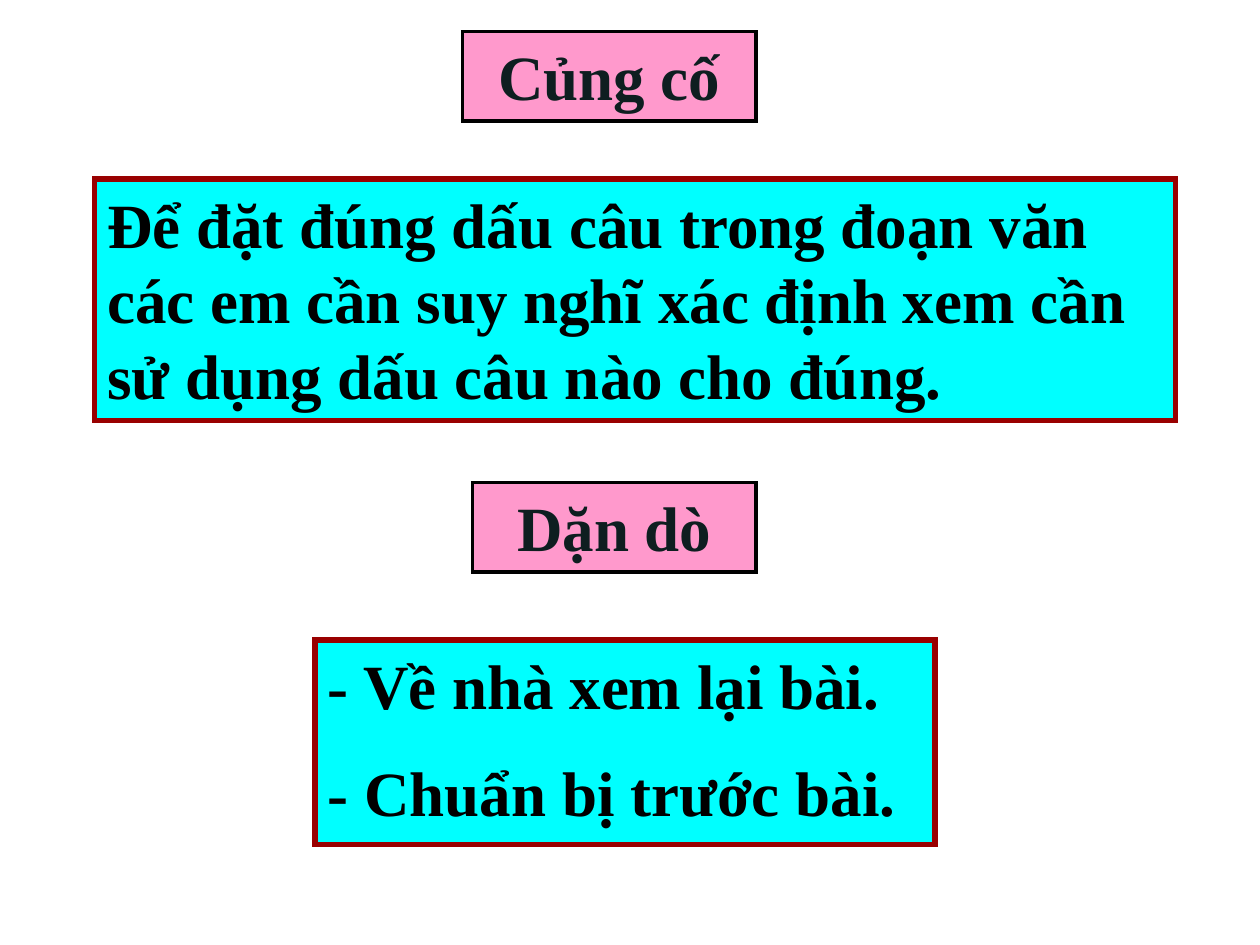
"""Build a lesson-closing slide with a recap and homework reminders."""
import lxml.etree
import pptx
import pptx.dml.color
import pptx.enum.text
import pptx.oxml.ns
import pptx.util
from pptx.util import Inches

HEADING_STYLE = {"fill": "FF99CC", "line": "000000", "width": 2, "ink": "0E1E20",
                 "align": pptx.enum.text.PP_ALIGN.CENTER}
BODY_STYLE = {"fill": "00FFFF", "line": "990000", "width": 3, "ink": "000000",
              "align": pptx.enum.text.PP_ALIGN.LEFT}
RECAP_HEADING = ["Củng cố"]
RECAP = ["Để đặt đúng dấu câu trong đoạn văn các em cần suy nghĩ "
         "xác định xem cần sử dụng dấu câu nào cho đúng."]
HOMEWORK_HEADING = ["Dặn dò"]
HOMEWORK = ["- Về nhà xem lại bài.", "- Chuẩn bị trước bài."]


def paint(color_format, hex_color):
    color_format.rgb = pptx.dml.color.RGBColor.from_string(hex_color)


def add_element(parent, tag, **attributes):
    lxml.etree.SubElement(parent, pptx.oxml.ns.qn(tag), **attributes)


def format_paragraph(paragraph, style, space_before):
    paragraph.alignment = style["align"]
    paragraph.line_spacing = 1.0
    paragraph.space_before = pptx.util.Pt(space_before)
    properties = paragraph._p.get_or_add_pPr()
    properties.set("marL", "0")
    properties.set("indent", "0")
    add_element(properties, "a:buNone")
    for run in paragraph.runs:
        run.font.name = "Times New Roman"
        run.font.size = pptx.util.Pt(36)
        run.font.bold = True
        paint(run.font.color, style["ink"])


def fill_box(box, lines, area, style):
    box.left, box.top, box.width, box.height = map(Inches, area)
    box.fill.solid()
    paint(box.fill.fore_color, style["fill"])
    paint(box.line.color, style["line"])
    box.line.width = pptx.util.Pt(style["width"])
    add_element(box.line._get_or_add_ln(), "a:miter", lim="800000")
    frame = box.text_frame
    frame.text = "\n".join(lines)
    frame.word_wrap = True
    frame.auto_size = pptx.enum.text.MSO_AUTO_SIZE.NONE
    frame.vertical_anchor = pptx.enum.text.MSO_ANCHOR.TOP
    for index, paragraph in enumerate(frame.paragraphs):
        format_paragraph(paragraph, style, 18 if index else 0)


def main():
    deck = pptx.Presentation()
    deck.slide_width, deck.slide_height = Inches(10), Inches(7.5)
    slide = deck.slides.add_slide(deck.slide_layouts.get_by_name("Two Content"))
    recap_heading, recap, homework = slide.placeholders
    homework_heading = slide.shapes.add_textbox(0, 0, 0, 0)
    fill_box(recap_heading, RECAP_HEADING, (3.67, 0.25, 2.33, 0.71), HEADING_STYLE)
    fill_box(recap, RECAP, (0.75, 1.42, 8.58, 1.92), BODY_STYLE)
    fill_box(homework_heading, HOMEWORK_HEADING, (3.75, 3.83, 2.25, 0.71), HEADING_STYLE)
    fill_box(homework, HOMEWORK, (2.5, 5.08, 4.92, 1.62), BODY_STYLE)
    deck.save("out.pptx")


if __name__ == "__main__":
    main()
